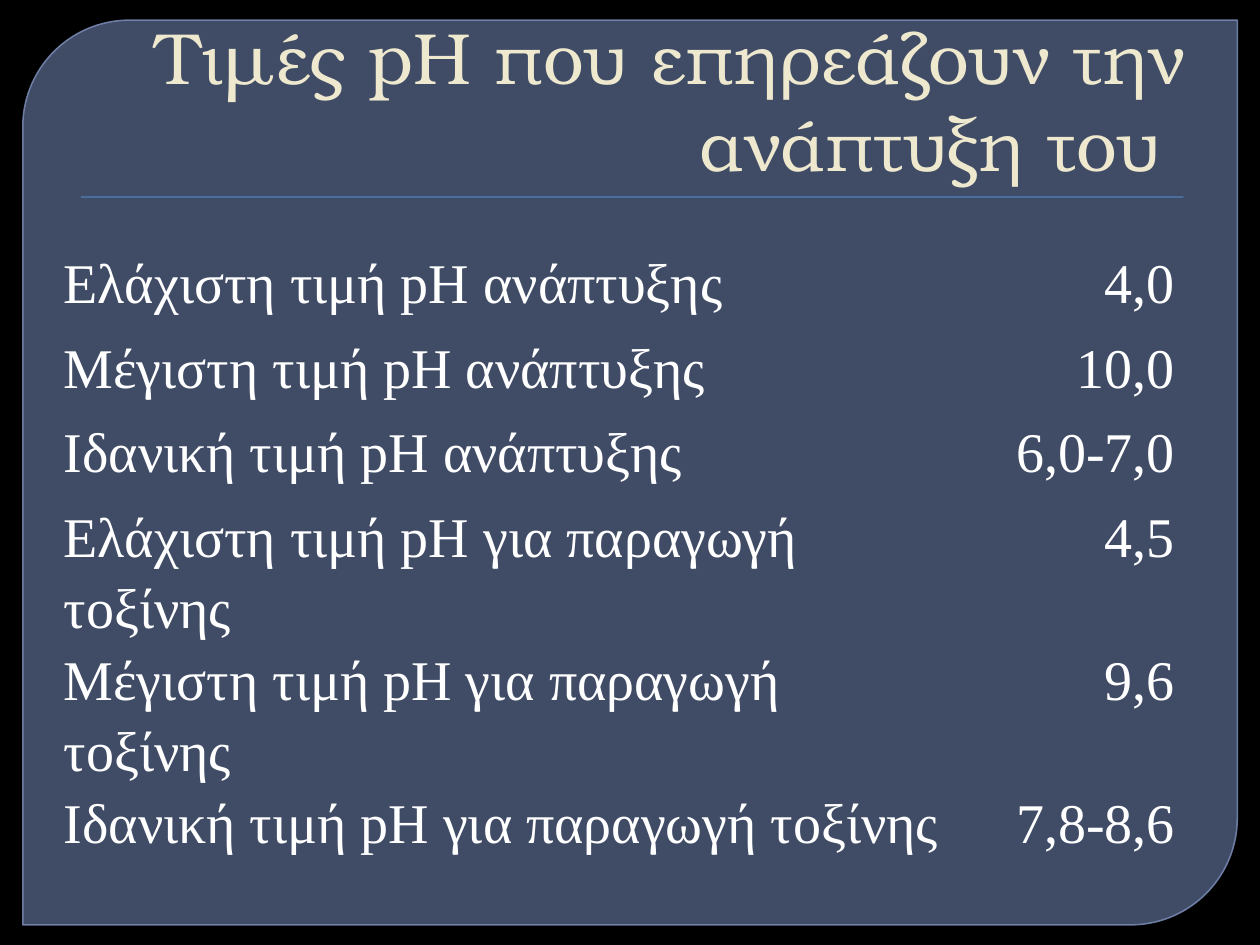
from dataclasses import dataclass

from lxml import etree
from pptx import Presentation
from pptx.dml.color import RGBColor
from pptx.enum.shapes import MSO_SHAPE
from pptx.enum.text import MSO_ANCHOR, MSO_AUTO_SIZE, PP_ALIGN
from pptx.oxml.ns import qn
from pptx.util import Pt

PANEL_SHAPE = MSO_SHAPE.ROUND_2_DIAG_RECTANGLE
RULE_SHAPE = MSO_SHAPE.RECTANGLE
BOTTOM = MSO_ANCHOR.BOTTOM
LEFT, RIGHT = PP_ALIGN.LEFT, PP_ALIGN.RIGHT
NO_AUTOFIT = MSO_AUTO_SIZE.NONE

BLACK = RGBColor(0x00, 0x00, 0x00)
WHITE = RGBColor(0xFF, 0xFF, 0xFF)
CREAM = RGBColor(0xED, 0xE8, 0xCE)
PANEL_BLUE = RGBColor(0x63, 0x75, 0x9D)
PANEL_EDGE = RGBColor(0x79, 0x89, 0xB3)
RULE_BLUE = RGBColor(0x4F, 0x81, 0xBD)

TITLE = "Τιμές pH που επηρεάζουν την ανάπτυξη του "
TITLE_FONT = "TeX Gyre Bonum"
TABLE_FONT = "Times New Roman"
PLAIN_TABLE_STYLE = "{2D5ABB26-0587-4C30-8999-92F81FD0307C}"
ROW_HEIGHT = 48.3
COLUMN_WIDTHS = (514.8, 131)


@dataclass
class Measurement:
    label: str
    value: str


MEASUREMENTS = [
    Measurement("Ελάχιστη τιμή pH ανάπτυξης", "4,0"),
    Measurement("Μέγιστη τιμή pH ανάπτυξης", "10,0"),
    Measurement("Ιδανική τιμή pH ανάπτυξης", "6,0-7,0"),
    Measurement("Ελάχιστη τιμή pH για παραγωγή τοξίνης", "4,5"),
    Measurement("Μέγιστη τιμή pH για παραγωγή τοξίνης", "9,6"),
    Measurement("Ιδανική τιμή pH για παραγωγή τοξίνης", "7,8-8,6"),
]


def set_opacity(fill_parent, percent: int) -> None:
    color = fill_parent.find(qn("a:solidFill"))[0]
    etree.SubElement(color, qn("a:alpha"), val=str(percent * 1000))


def style_font(para, name: str, size: float, color: RGBColor) -> None:
    for span in para.runs:
        span.font.name = name
        span.font.size = Pt(size)
        span.font.color.rgb = color


def add_backdrop(page) -> None:
    panel = page.shapes.add_shape(PANEL_SHAPE, Pt(13), Pt(11.5), Pt(694), Pt(517))
    panel.adjustments[0] = 0.118
    panel.adjustments[1] = 0
    panel.shadow.inherit = False
    panel.fill.solid()
    panel.fill.fore_color.rgb = PANEL_BLUE
    panel.line.color.rgb = PANEL_EDGE
    panel.line.width = Pt(0.87)
    properties = panel._element.spPr
    set_opacity(properties, 65)
    set_opacity(properties.find(qn("a:ln")), 88)

    rule = page.shapes.add_shape(RULE_SHAPE, Pt(46.2), Pt(112.2), Pt(630), Pt(0.7))
    rule.shadow.inherit = False
    rule.fill.solid()
    rule.fill.fore_color.rgb = RULE_BLUE
    rule.line.fill.background()


def add_title(page) -> None:
    title = page.shapes.title
    page.shapes._spTree.append(title._element)  # bring in front of the panel
    title.left, title.top, title.width, title.height = Pt(36), Pt(20), Pt(648), Pt(90)
    frame = title.text_frame
    frame.text = TITLE
    frame.word_wrap = True
    frame.auto_size = NO_AUTOFIT
    frame.vertical_anchor = BOTTOM
    para = frame.paragraphs[0]
    para.alignment = RIGHT
    para._p.get_or_add_pPr().set("marL", str(Pt(4.3)))
    style_font(para, TITLE_FONT, 41.4, CREAM)


def fill_cell(cell, text: str, alignment: PP_ALIGN) -> None:
    cell.fill.background()
    cell.margin_left = cell.margin_right = Pt(5.4)
    cell.margin_top = cell.margin_bottom = 0
    cell.text_frame.text = text
    para = cell.text_frame.paragraphs[0]
    para.alignment = alignment
    para.line_spacing = 1.15
    style_font(para, TABLE_FONT, 32, WHITE)


def add_measurement_table(page) -> None:
    count = len(MEASUREMENTS)
    frame = page.shapes.add_table(
        count, len(COLUMN_WIDTHS), Pt(31), Pt(139.7),
        Pt(sum(COLUMN_WIDTHS)), Pt(ROW_HEIGHT * count))
    table = frame.table
    table.first_row = False
    table.horz_banding = False
    table._tbl.tblPr.find(qn("a:tableStyleId")).text = PLAIN_TABLE_STYLE
    for column, width in zip(table.columns, COLUMN_WIDTHS):
        column.width = Pt(width)
    for index, measurement in enumerate(MEASUREMENTS):
        table.rows[index].height = Pt(ROW_HEIGHT)
        fill_cell(table.cell(index, 0), measurement.label, LEFT)
        fill_cell(table.cell(index, 1), measurement.value, RIGHT)


def main() -> None:
    deck = Presentation()
    deck.slide_width, deck.slide_height = Pt(720), Pt(540)
    page = deck.slides.add_slide(deck.slide_layouts[5])
    page.background.fill.solid()
    page.background.fill.fore_color.rgb = BLACK
    add_backdrop(page)
    add_title(page)
    add_measurement_table(page)
    deck.save("out.pptx")


if __name__ == "__main__":
    main()
